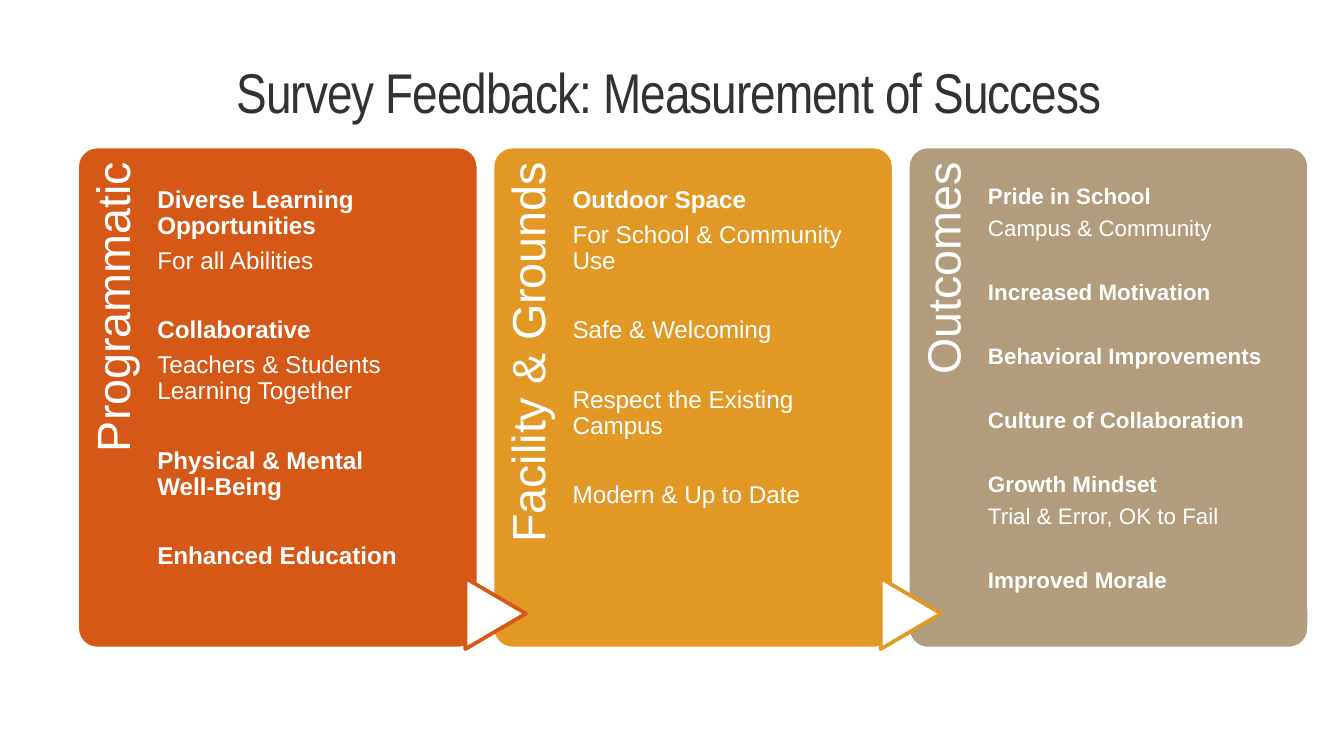
from dataclasses import dataclass

from pptx import Presentation
from pptx.dml.color import RGBColor
from pptx.enum.shapes import MSO_SHAPE
from pptx.enum.text import MSO_ANCHOR, MSO_AUTO_SIZE, PP_ALIGN
from pptx.util import Pt

ROUNDED = MSO_SHAPE.ROUNDED_RECTANGLE
TRIANGLE = MSO_SHAPE.FLOWCHART_EXTRACT
TOP, BOTTOM = MSO_ANCHOR.TOP, MSO_ANCHOR.BOTTOM
LEFT, CENTER, RIGHT = PP_ALIGN.LEFT, PP_ALIGN.CENTER, PP_ALIGN.RIGHT
NO_FIT = MSO_AUTO_SIZE.NONE


@dataclass(frozen=True)
class Theme:
    white: RGBColor = RGBColor.from_string("FFFFFF")
    ink: RGBColor = RGBColor.from_string("323232")
    orange: RGBColor = RGBColor.from_string("D55816")
    amber: RGBColor = RGBColor.from_string("E19825")
    tan: RGBColor = RGBColor.from_string("B19C7D")
    title_font: str = "Arial Narrow"
    body_font: str = "Arial"
    title_size: int = 30
    heading_size: int = 25
    body_size: int = 13
    small_size: int = 12


THEME = Theme()


def set_frame(frame, insets, anchor=TOP):
    frame.word_wrap = True
    frame.auto_size = NO_FIT
    frame.vertical_anchor = anchor
    frame.margin_left, frame.margin_top, frame.margin_right, frame.margin_bottom = map(Pt, insets)


def add_run(paragraph, text, font, size, color, align, bold=False):
    paragraph.alignment = align
    paragraph.line_spacing = 0.9
    run = paragraph.add_run()
    run.text = text
    run.font.name = font
    run.font.size = Pt(size)
    run.font.bold = bold
    run.font.color.rgb = color
    return run


columns = [
    ("Programmatic", THEME.orange, THEME.body_size, [
        [("Diverse Learning Opportunities", True), ("For all Abilities", False)],
        [("Collaborative", True), ("Teachers & Students Learning Together", False)],
        [("Physical & Mental\nWell-Being", True)],
        [("Enhanced Education", True)],
    ]),
    ("Facility & Grounds", THEME.amber, THEME.body_size, [
        [("Outdoor Space", True), ("For School & Community Use", False)],
        [("Safe & Welcoming", False)],
        [("Respect the Existing Campus", False)],
        [("Modern & Up to Date", False)],
    ]),
    ("Outcomes", THEME.tan, THEME.small_size, [
        [("Pride in School", True), ("Campus & Community", False)],
        [("Increased Motivation", True)],
        [("Behavioral Improvements", True)],
        [("Culture of Collaboration", True)],
        [("Growth Mindset", True), ("Trial & Error, OK to Fail", False)],
        [("Improved Morale", True)],
    ]),
]

deck = Presentation()
deck.slide_width, deck.slide_height = Pt(720), Pt(405)
slide = deck.slides.add_slide(deck.slide_layouts[5])

title = slide.shapes.title
title.left, title.top, title.width, title.height = Pt(0), Pt(16), Pt(717), Pt(54.5)
set_frame(title.text_frame, (5, 3, 5, 3), BOTTOM)
headline = add_run(title.text_frame.paragraphs[0], "Survey Feedback: Measurement of Success",
                   THEME.title_font, THEME.title_size, THEME.ink, CENTER)
headline.font._element.set("spc", "-50")

card_left, card_top, card_width, card_height, pitch = 41.3, 78.5, 215, 269, 222.5
previous_color = None

for index, (heading, color, size, groups) in enumerate(columns):
    left = card_left + index * pitch

    card = slide.shapes.add_shape(ROUNDED, Pt(left), Pt(card_top), Pt(card_width), Pt(card_height))
    card.adjustments[0] = 0.05
    card.shadow.inherit = False
    card.fill.solid()
    card.fill.fore_color.rgb = color
    card.line.color.rgb = THEME.white
    card.line.width = Pt(2)

    side_heading = slide.shapes.add_textbox(Pt(left - 88.5), Pt(167), Pt(220.5), Pt(43))
    side_heading.rotation = 270
    set_frame(side_heading.text_frame, (0, 6.5, 8.6, 0))
    add_run(side_heading.text_frame.paragraphs[0], heading,
            THEME.body_font, THEME.heading_size, THEME.white, RIGHT)

    if previous_color is not None:
        arrow = slide.shapes.add_shape(TRIANGLE, Pt(left - 17.3), Pt(312.5), Pt(38), Pt(32.4))
        arrow.rotation = 90
        arrow.shadow.inherit = False
        arrow.fill.solid()
        arrow.fill.fore_color.rgb = THEME.white
        arrow.line.color.rgb = previous_color
        arrow.line.width = Pt(2)
    previous_color = color

    group_gap = size * 1.43
    points = slide.shapes.add_textbox(Pt(left + 43), Pt(card_top), Pt(160), Pt(card_height))
    set_frame(points.text_frame, (0, 3.3 + group_gap, 0, 0))
    paragraph = points.text_frame.paragraphs[0]
    for group_index, group in enumerate(groups):
        for line_index, (text, bold) in enumerate(group):
            if group_index or line_index:
                paragraph = points.text_frame.add_paragraph()
            paragraph.space_after = Pt(round(size * 0.35, 2))
            if group_index and not line_index:
                paragraph.space_before = Pt(round(group_gap, 2))
            for part_index, part in enumerate(text.split("\n")):
                if part_index:
                    paragraph.add_line_break()
                add_run(paragraph, part, THEME.body_font, size, THEME.white, LEFT, bold)

deck.save("out.pptx")
